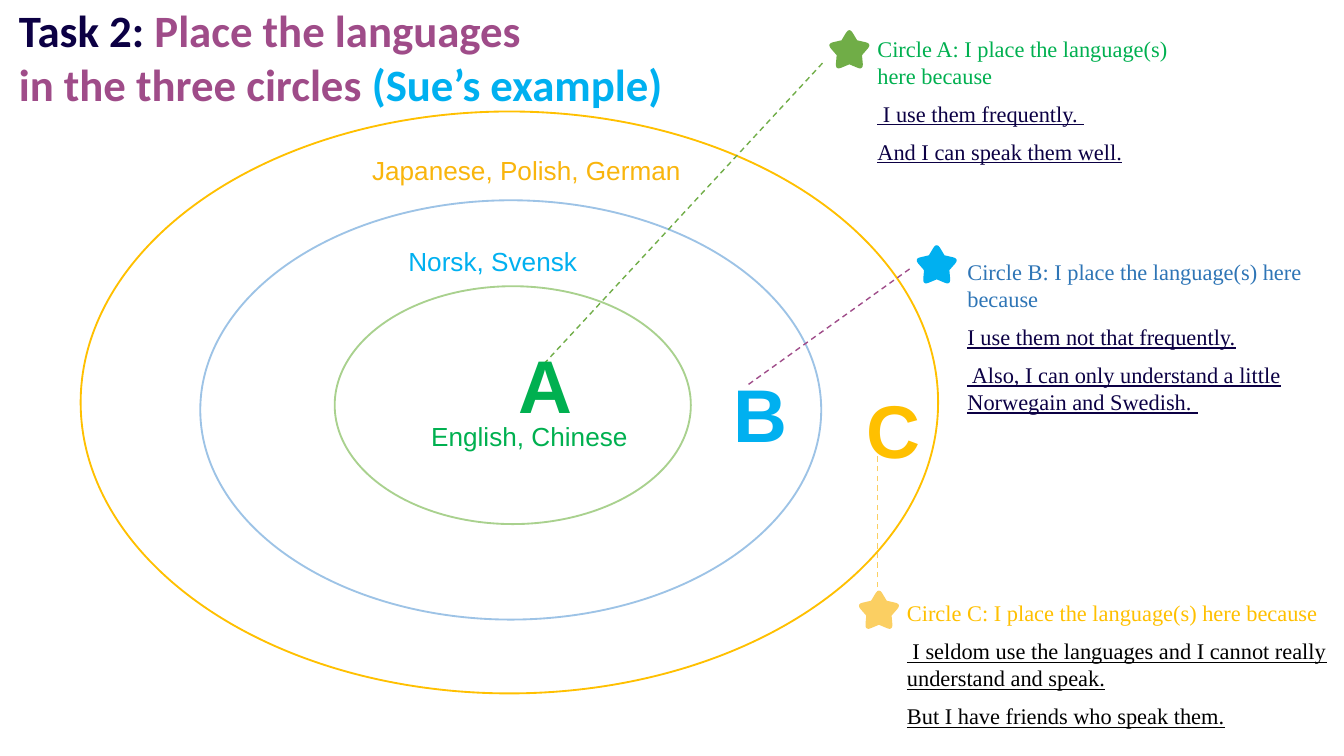
import math
from dataclasses import dataclass

import pptx
import pptx.util
import pptx.dml.color
import pptx.enum.dml
import pptx.enum.shapes
import pptx.enum.text
import pptx.oxml.ns
from lxml import etree

Inches = pptx.util.Inches
Pt = pptx.util.Pt


@dataclass(frozen=True)
class Theme:
    white: str = "FFFFFF"
    black: str = "000000"
    navy: str = "0C0044"
    plum: str = "9F4C89"
    green: str = "00B050"
    leaf: str = "70AD47"
    pale: str = "A9D18E"
    sky: str = "00B0F0"
    blue: str = "2E75B6"
    mist: str = "9DC3E6"
    gold: str = "FFC000"
    amber: str = "F9B50D"
    sand: str = "FBCF62"
    head: str = "Calibri"
    sans: str = "Arial"
    serif: str = "Times New Roman"
    title: int = 24
    letter: int = 40
    label: int = 14
    note: int = 12


T = Theme()


def color(code):
    return pptx.dml.color.RGBColor.from_string(code)


def style(run, face, size, code, bold=False, under=False):
    font = run.font
    font.name, font.size, font.bold = face, Pt(size), bold
    font.underline = under
    font.color.rgb = color(code)


def text_box(slide, box, grow=False):
    frame = slide.shapes.add_textbox(*map(Inches, box)).text_frame
    frame.word_wrap = True
    if grow:
        frame.auto_size = pptx.enum.text.MSO_AUTO_SIZE.SHAPE_TO_FIT_TEXT
    return frame


def word(slide, box, text, size, code, bold=False):
    """One line of sans text; the bold letters are centred."""
    frame = text_box(slide, box, grow=True)
    frame.text = text
    para = frame.paragraphs[0]
    if bold:
        para.alignment = pptx.enum.text.PP_ALIGN.CENTER
    style(para.runs[0], T.sans, size, code, bold)


def title(slide, box, lines):
    frame = text_box(slide, box)
    frame.margin_left = frame.margin_right = 0
    frame.margin_top = frame.margin_bottom = 0
    for i, parts in enumerate(lines):
        para = frame.add_paragraph() if i else frame.paragraphs[0]
        for text, code in parts:
            run = para.add_run()
            run.text = text
            style(run, T.head, T.title, code, bold=True)


def rings(slide, box):
    """Three nested ellipses, placed from the outer one's corner."""
    left, top, wide, high = box
    group = slide.shapes.add_group_shape()
    for x, y, w, h, code in (
        (0, 0, wide, high, T.gold),
        (0.89, 0.66, 4.62, 3.12, T.mist),
        (1.89, 1.3, 2.65, 1.77, T.pale),
    ):
        ring = group.shapes.add_shape(
            pptx.enum.shapes.MSO_SHAPE.OVAL,
            *map(Inches, (left + x, top + y, w, h)))
        ring.shadow.inherit = False
        ring.fill.solid()
        ring.fill.fore_color.rgb = color(T.white)
        ring.line.color.rgb = color(code)
        ring.line.width = Pt(1)


def dash(slide, start, end, code):
    line = slide.shapes.add_connector(
        pptx.enum.shapes.MSO_CONNECTOR.STRAIGHT,
        *map(Inches, (*start, *end)))
    line.line.color.rgb = color(code)
    line.line.width = Pt(0.75)
    line.line.dash_style = pptx.enum.dml.MSO_LINE.DASH
    props = line._element.spPr
    etree.SubElement(props, pptx.oxml.ns.qn("a:effectLst"))


def star(slide, box, code):
    """Five-pointed star whose tips are rounded by short curves."""
    left, top, size = box
    mid_x, mid_y = left + size / 2, top + size / 2

    def spot(i):
        reach = size * (0.33 if i % 2 else 0.59)
        turn = math.radians(36 * i - 90)
        return mid_x + reach * math.cos(turn), mid_y + reach * math.sin(turn)

    def blend(a, b, t):
        return tuple(p + (q - p) * t for p, q in zip(a, b))

    points = []
    for i in range(0, 10, 2):
        tip = spot(i)
        first, last = (blend(tip, spot(i + k), 0.45) for k in (-1, 1))
        for step in range(9):
            t = step / 8
            points.append(blend(blend(first, tip, t), blend(tip, last, t), t))
        points.append(spot(i + 1))
    points = [tuple(map(Inches, p)) for p in points]
    path = slide.shapes.build_freeform(*points[0])
    path.add_line_segments(points[1:], close=True)
    shape = path.convert_to_shape()
    shape.shadow.inherit = False
    shape.fill.solid()
    shape.fill.fore_color.rgb = color(code)
    shape.line.fill.background()


def note(slide, box, lead, lines, tint, ink):
    """Coloured lead sentence followed by underlined answers."""
    frame = text_box(slide, box)
    for i, text in enumerate((lead, *lines)):
        para = frame.add_paragraph() if i else frame.paragraphs[0]
        para.text = text
        para.space_before = Pt(6)
        style(para.runs[0], T.serif, T.note, ink if i else tint, under=i > 0)


def main():
    deck = pptx.Presentation()
    deck.slide_width = Inches(10)
    deck.slide_height = deck.slide_width * 9 // 16
    slide = deck.slides.add_slide(deck.slide_layouts[6])

    # Circles and the languages in them
    rings(slide, (0.6, 0.83, 6.38, 4.33))
    for box, text, code in (
        ((3.11, 3.08, 1.93, 0.34), "English, Chinese", T.green),
        ((2.94, 1.78, 1.87, 0.34), "Norsk, Svensk", T.sky),
        ((2.67, 1.1, 2.67, 0.34), "Japanese, Polish, German", T.amber),
    ):
        word(slide, box, text, T.label, code)

    # Reasons, each with its star and leader line
    for name, box, lines, tint, ink in (
        ("A", (6.43, 0.21, 2.65, 1.2),
         (" I use them frequently. ", "And I can speak them well."),
         T.green, T.navy),
        ("B", (7.1, 1.87, 3.17, 1.88),
         ("I use them not that frequently.",
          " Also, I can only understand a little Norwegain and Swedish. "),
         T.blue, T.navy),
        ("C", (6.65, 4.41, 3.57, 1.6),
         (" I seldom use the languages and I cannot really understand"
          " and speak.", "But I have friends who speak them."),
         T.gold, T.black),
    ):
        lead = f"Circle {name}: I place the language(s) here because"
        note(slide, box, lead, lines, tint, ink)
    for spot, fill, start, end, code in (
        ((6.17, 0.23), T.leaf, (6.12, 0.47), (3.99, 2.77), T.leaf),
        ((6.82, 1.83), T.sky, (5.57, 2.86), (6.77, 2), T.plum),
        ((6.39, 4.4), T.sand, (6.53, 4.44), (6.53, 3.32), T.sand),
    ):
        star(slide, (*spot, 0.3), fill)
        dash(slide, start, end, code)

    # Title and circle letters
    title(slide, (0.14, 0.02, 5.22, 0.89), (
        (("Task 2: ", T.navy), ("Place the languages", T.plum)),
        (("in the three circles ", T.plum), ("(Sue’s example)", T.sky)),
    ))
    for text, left, top, code in (
        ("A", 3.76, 2.47, T.green),
        ("B", 5.36, 2.69, T.sky),
        ("C", 6.35, 2.81, T.gold),
    ):
        word(slide, (left, top, 0.34, 0.77), text, T.letter, code, bold=True)

    deck.save("out.pptx")


if __name__ == "__main__":
    main()
